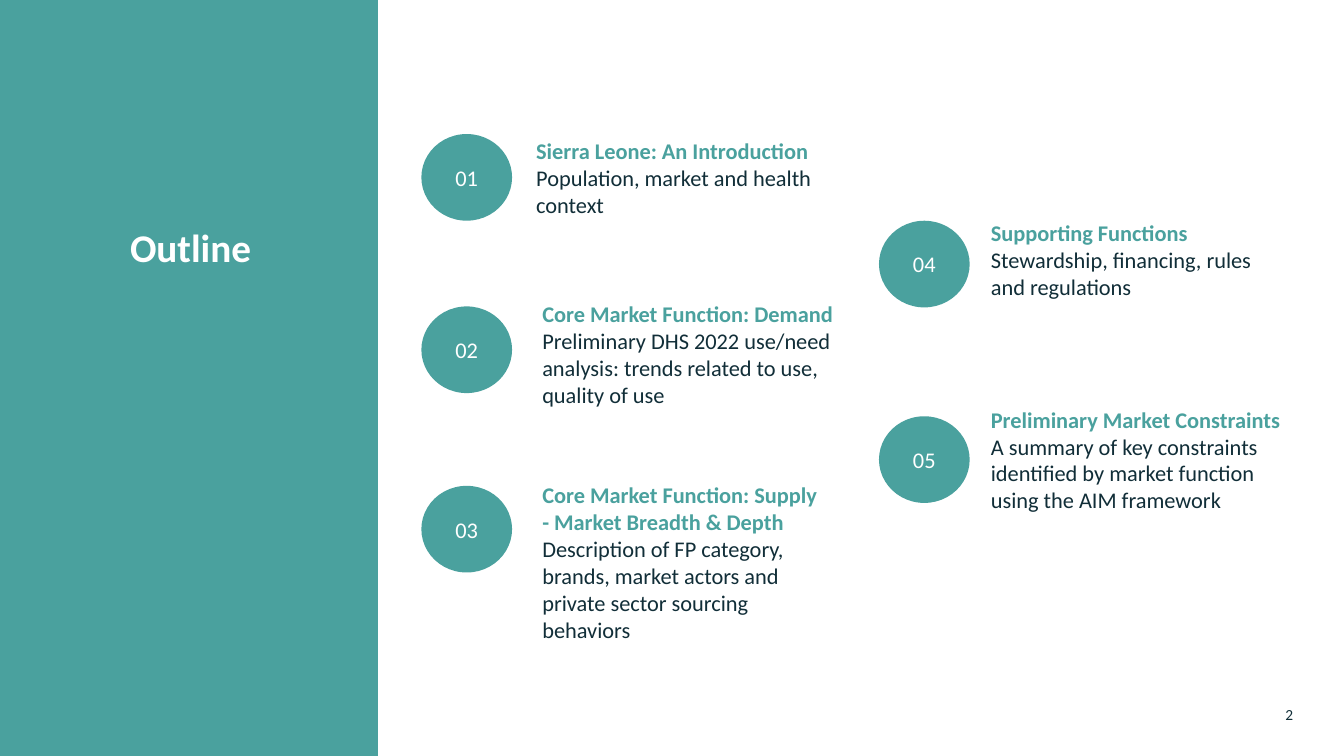
import dataclasses
import typing

import pptx
import pptx.dml.color
import pptx.enum.shapes
import pptx.enum.text
import pptx.util

TEAL = pptx.dml.color.RGBColor(0x4A, 0xA1, 0x9E)
NAVY = pptx.dml.color.RGBColor(0x11, 0x2E, 0x38)
WHITE = pptx.dml.color.RGBColor(0xFF, 0xFF, 0xFF)

SLIDE_WIDTH = pptx.util.Inches(13.33)
SLIDE_HEIGHT = pptx.util.Inches(7.5)
COLUMN = SLIDE_WIDTH / 40
ROW = SLIDE_HEIGHT / 30

FONT_NAME = "Calibri"
LEFT = pptx.enum.text.PP_ALIGN.LEFT
CENTER = pptx.enum.text.PP_ALIGN.CENTER
RIGHT = pptx.enum.text.PP_ALIGN.RIGHT
SHAPE_TYPE = pptx.enum.shapes.MSO_SHAPE


@dataclasses.dataclass(frozen=True)
class Area:
    column: float
    row: float
    columns: float
    rows: float

    def position(self) -> dict[str, int]:
        return {
            "left": round(self.column * COLUMN),
            "top": round(self.row * ROW),
            "width": round(self.columns * COLUMN),
            "height": round(self.rows * ROW),
        }


@dataclasses.dataclass(frozen=True)
class Line:
    text: str
    size: float
    color: pptx.dml.color.RGBColor
    bold: bool = False


@dataclasses.dataclass(frozen=True)
class Section:
    heading: str
    description: str
    circle_column: float
    circle_row: float
    text_area: Area


FIRST_COLUMN = 12.54
SECOND_COLUMN = 26.16
CIRCLE_COLUMNS = 2.7
CIRCLE_ROWS = 3.44

SECTIONS = [
    Section(
        "Sierra Leone: An Introduction",
        "Population, market and health context",
        FIRST_COLUMN, 5.32, Area(15.96, 5.32, 10.2, 3.44),
    ),
    Section(
        "Core Market Function: Demand",
        "Preliminary DHS 2022 use/need analysis: trends related to use, quality of use",
        FIRST_COLUMN, 12.16, Area(16.14, 12.2, 8.79, 3.72),
    ),
    Section(
        "Core Market Function: Supply - Market Breadth & Depth",
        "Description of FP category, brands, market actors and private sector sourcing behaviors",
        FIRST_COLUMN, 19.28, Area(16.14, 19.92, 8.46, 4.76),
    ),
    Section(
        "Supporting Functions",
        "Stewardship, financing, rules and regulations",
        SECOND_COLUMN, 8.76, Area(29.49, 8.44, 8.76, 3.72),
    ),
    Section(
        "Preliminary Market Constraints",
        "A summary of key constraints identified by market function using the AIM framework",
        SECOND_COLUMN, 16.52, Area(29.49, 16.52, 9.27, 3.44),
    ),
]


def set_attributes(target: typing.Any, values: dict[str, typing.Any]) -> None:
    for name, value in values.items():
        setattr(target, name, value)


def write_lines(shape, lines: list[Line], alignment, side: float = 0, edge: float = 0,
                spacing: float = 1.0) -> None:
    frame = shape.text_frame
    set_attributes(frame, {
        "word_wrap": True,
        "auto_size": pptx.enum.text.MSO_AUTO_SIZE.NONE,
        "vertical_anchor": pptx.enum.text.MSO_ANCHOR.MIDDLE,
        "margin_left": pptx.util.Inches(side),
        "margin_right": pptx.util.Inches(side),
        "margin_top": pptx.util.Inches(edge),
        "margin_bottom": pptx.util.Inches(edge),
    })
    frame.text = "\n".join(line.text for line in lines)
    for paragraph, line in zip(frame.paragraphs, lines):
        set_attributes(paragraph, {
            "alignment": alignment,
            "line_spacing": spacing,
            "space_before": pptx.util.Pt(0),
        })
        font = paragraph.runs[0].font
        set_attributes(font, {
            "name": FONT_NAME,
            "size": pptx.util.Pt(line.size),
            "bold": line.bold,
        })
        font.color.rgb = line.color


def add_filled_shape(slide, shape_type, area: Area):
    shape = slide.shapes.add_shape(shape_type, **area.position())
    shape.shadow.inherit = False
    shape.fill.solid()
    shape.fill.fore_color.rgb = TEAL
    shape.line.fill.background()
    return shape


def add_text(slide, area: Area, lines: list[Line], alignment=LEFT) -> None:
    write_lines(slide.shapes.add_textbox(**area.position()), lines, alignment)


def add_section(slide, number: int, section: Section) -> None:
    circle_area = Area(section.circle_column, section.circle_row, CIRCLE_COLUMNS, CIRCLE_ROWS)
    circle = add_filled_shape(slide, SHAPE_TYPE.OVAL, circle_area)
    write_lines(circle, [Line(f"{number:02d}", 16, WHITE)], CENTER, side=0.1, edge=0.05)
    add_text(slide, section.text_area, [
        Line(section.heading, 16, TEAL, bold=True),
        Line(section.description, 16, NAVY),
    ])


def main() -> None:
    presentation = pptx.Presentation()
    set_attributes(presentation, {"slide_width": SLIDE_WIDTH, "slide_height": SLIDE_HEIGHT})
    slide = presentation.slides.add_slide(presentation.slide_layouts.get_by_name("Title Only"))

    panel = add_filled_shape(slide, SHAPE_TYPE.RECTANGLE, Area(0, 0, 11.25, 30))
    title = slide.shapes.title
    title.element.addprevious(panel.element)
    set_attributes(title, Area(0.42, 8.08, 10.5, 3.68).position())
    write_lines(title, [Line("Outline", 28, WHITE, bold=True)], CENTER,
                side=0.1, edge=0.05, spacing=0.9)

    for number, section in enumerate(SECTIONS, start=1):
        add_section(slide, number, section)
    add_text(slide, Area(37.02, 27.96, 1.47, 0.8), [Line("2", 11, NAVY)], RIGHT)

    presentation.save("out.pptx")


if __name__ == "__main__":
    main()
